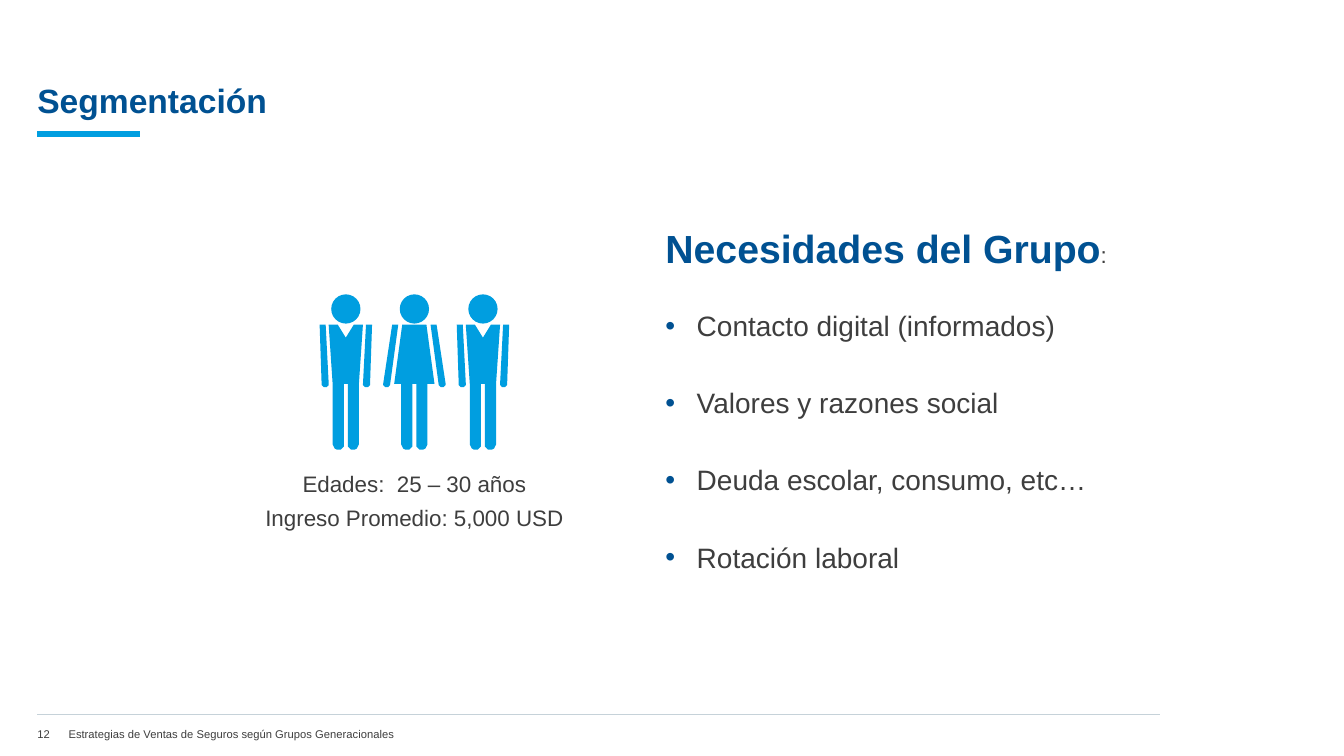
from pptx import Presentation
from pptx.dml.color import RGBColor
from pptx.enum.shapes import MSO_CONNECTOR as CONNECTOR, MSO_SHAPE as SHAPE
from pptx.enum.text import MSO_ANCHOR as ANCHOR, PP_ALIGN as ALIGN
from pptx.oxml.ns import qn
from pptx.util import Inches, Pt
from lxml import etree

NAVY, SKY, TEXT, RULE = "005192", "009EE0", "3E3E3E", "C6D2D9"
NEEDS = [
    "Contacto digital (informados)",
    "Valores y razones social",
    "Deuda escolar, consumo, etc…",
    "Rotación laboral",
]

# Figure outlines in inches: x from the body's axis, y from the top of the head
HEAD = 0.29
SHOULDER, HIP = 0.3, 0.89
LEG = [(0.13, HIP), (0.13, 1.49), (0.12, 1.51), (0.11, 1.53), (0.09, 1.54),
       (0.05, 1.54), (0.04, 1.53), (0.02, 1.51), (0.02, 1.49), (0.02, HIP)]
HAND = [(0, HIP), (0, 0.9), (0.01, 0.91), (0.02, 0.92),
        (0.05, 0.92), (0.06, 0.91), (0.07, 0.9), (0.07, HIP)]
MAN = {"torso": [(0, 0.43), (0.08, SHOULDER), (0.17, SHOULDER)],
       "arm": (0.2, 0.26), "hand": 0.17}
WOMAN = {"torso": [(0.12, SHOULDER), (0.2, HIP)],
         "arm": (0.16, 0.22), "hand": 0.24}


def color(value):
    return RGBColor.from_string(value)


def style(font, size, value, bold=False):
    font.name, font.size, font.bold = "Arial", Pt(size), bold
    font.color.rgb = color(value)


def add_text(slide, box, text, size, value=TEXT, bold=False,
             anchor=ANCHOR.TOP, align=ALIGN.LEFT):
    """Add a text box without margins and return its text frame."""
    frame = slide.shapes.add_textbox(*map(Inches, box)).text_frame
    frame.word_wrap = True
    frame.vertical_anchor = anchor
    frame.margin_left = frame.margin_right = 0
    frame.margin_top = frame.margin_bottom = 0
    paragraph = frame.paragraphs[0]
    paragraph.text, paragraph.alignment = text, align
    style(paragraph.font, size, value, bold)
    return frame


def add_rule(slide, left, top, width, value, weight):
    line = slide.shapes.add_connector(
        CONNECTOR.STRAIGHT, Inches(left), Inches(top),
        Inches(left + width), Inches(top))
    line.line.color.rgb = color(value)
    line.line.width = Pt(weight)
    etree.SubElement(line._element.spPr, qn("a:effectLst"))


def add_bullet(paragraph):
    properties = paragraph._p.get_or_add_pPr()
    properties.set("marL", str(Inches(0.31)))
    properties.set("indent", str(-Inches(0.31)))
    bullet_color = etree.SubElement(properties, qn("a:buClr"))
    etree.SubElement(bullet_color, qn("a:srgbClr"), val=NAVY)
    etree.SubElement(properties, qn("a:buFont"), typeface="Arial")
    etree.SubElement(properties, qn("a:buChar"), char="•")


def paint(shape):
    shape.shadow.inherit = False
    shape.fill.solid()
    shape.fill.fore_color.rgb = color(SKY)
    shape.line.fill.background()


def mirror(points):
    return [(-x, y) for x, y in reversed(points)]


def add_figure(group, axis, top, kind):
    """Draw one standing person centred on the given axis."""
    head = group.shapes.add_shape(
        SHAPE.OVAL, Inches(axis - HEAD / 2), Inches(top),
        Inches(HEAD), Inches(HEAD))
    paint(head)
    half = kind["torso"] + LEG
    inner, outer = kind["arm"]
    hand = [(kind["hand"] + x, y) for x, y in HAND]
    arm = [(inner, SHOULDER), *hand, (outer, SHOULDER)]
    for outline in (half + mirror(half), arm, mirror(arm)):
        points = [(Inches(axis + x), Inches(top + y)) for x, y in outline]
        builder = group.shapes.build_freeform(*points[0])
        builder.add_line_segments(points[1:], close=True)
        paint(builder.convert_to_shape())


def add_title(slide, left, top, width, height):
    add_text(slide, (left, top, width, height - 0.04), "Segmentación", 24,
             NAVY, True, ANCHOR.BOTTOM)
    add_rule(slide, left, top + height + 0.1, 1.02, SKY, 4.5)


def add_profile(slide, left, top, width):
    """Three people above the two lines that describe the segment."""
    axis = left + width / 2
    group = slide.shapes.add_group_shape()
    for place, kind in zip((-1, 0, 1), (MAN, WOMAN, MAN)):
        add_figure(group, axis + place * 0.68, top, kind)
    facts = ["Edades:  25 – 30 años", "Ingreso Promedio: 5,000 USD"]
    for row, fact in enumerate(facts):
        add_text(slide, (left, top + 1.74 + row * 0.34, width, 0.28), fact, 16,
                 align=ALIGN.CENTER)


def add_needs(slide, left, top, width, height):
    frame = add_text(slide, (left, top, width, height),
                     "Necesidades del Grupo", 28, NAVY, True)
    colon = frame.paragraphs[0].add_run()
    colon.text = ":"
    style(colon.font, 16, TEXT)
    for index, need in enumerate(NEEDS):
        paragraph = frame.add_paragraph()
        paragraph.text = need
        paragraph.space_before = Pt(31 if index else 26.5)
        add_bullet(paragraph)
        style(paragraph.font, 20, TEXT)


def add_footer(slide, left, top, width):
    add_rule(slide, left, top, width, RULE, 0.75)
    number_width = 0.31
    add_text(slide, (left, top + 0.07, number_width, 0.24), "12", 8,
             anchor=ANCHOR.MIDDLE)
    add_text(slide, (left + number_width, top + 0.07, width - number_width, 0.24),
             "Estrategias de Ventas de Seguros según Grupos Generacionales", 8,
             anchor=ANCHOR.MIDDLE)


def main():
    presentation = Presentation()
    presentation.slide_width = Inches(13.33)
    presentation.slide_height = Inches(7.5)
    slide = presentation.slides.add_slide(presentation.slide_layouts[6])
    add_title(slide, 0.37, 0.36, 12.59, 0.87)
    add_profile(slide, 2.56, 2.92, 3.1)
    add_needs(slide, 6.6, 2.23, 4.49, 4.5)
    add_footer(slide, 0.37, 7.09, 11.14)
    presentation.save("out.pptx")


if __name__ == "__main__":
    main()
